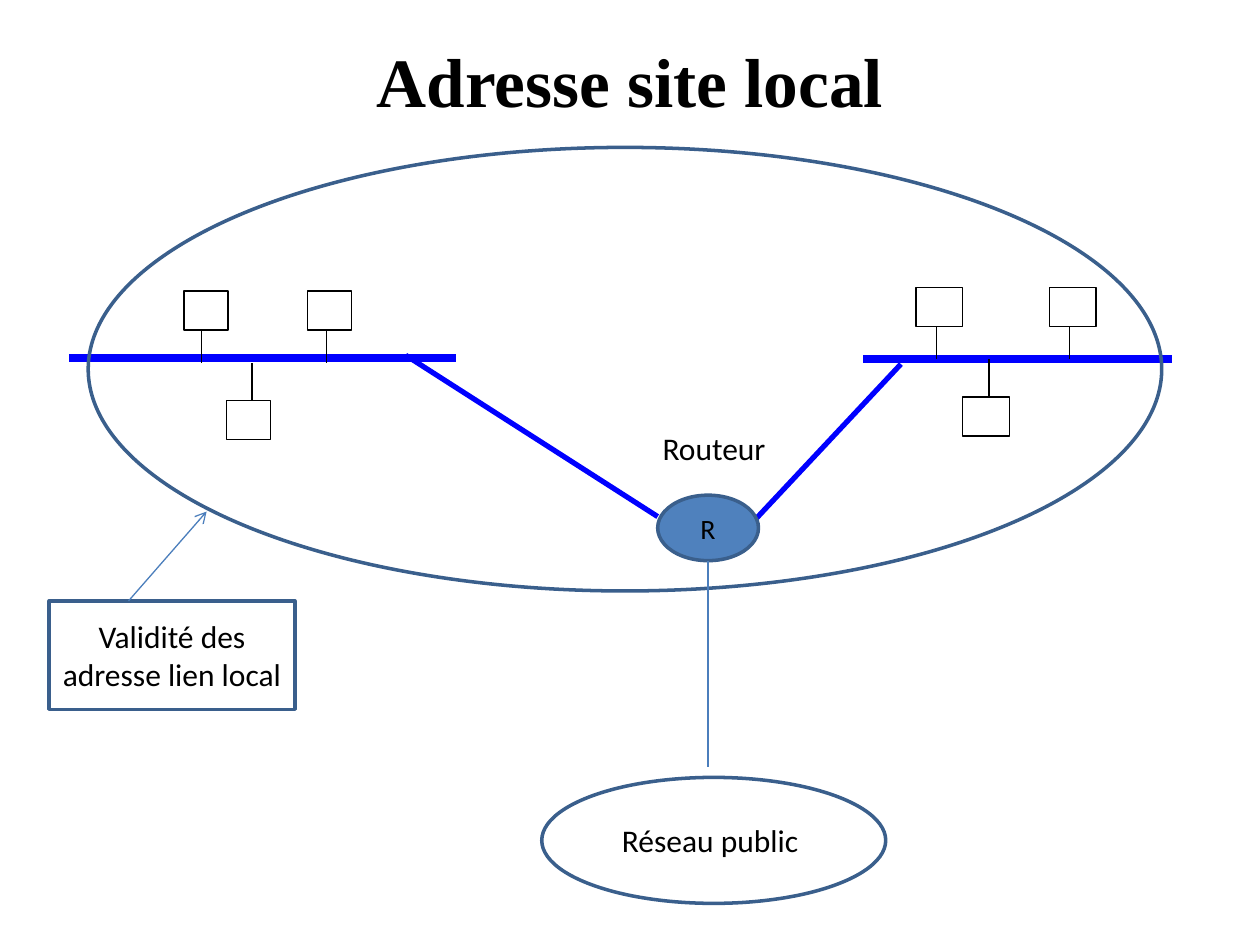
"""Build the slide showing the reach of site-local addresses around a router."""
from dataclasses import dataclass
from typing import NamedTuple, Optional

from lxml.etree import SubElement
from pptx import Presentation
from pptx.dml.color import RGBColor
from pptx.enum.shapes import MSO_CONNECTOR as Connector, MSO_SHAPE as Preset
from pptx.enum.text import MSO_ANCHOR as Anchor, MSO_AUTO_SIZE as AutoSize, PP_ALIGN as Align
from pptx.oxml.ns import qn
from pptx.util import Inches, Pt

COLUMNS, ROWS = 100, 75
SLIDE_WIDTH, SLIDE_HEIGHT = Inches(10), Inches(7.5)
TITLE_ONLY = 5


@dataclass(frozen=True)
class Theme:
    text: str = "000000"
    paper: str = "FFFFFF"
    cable: str = "0000FF"
    accent: str = "4F81BD"
    outline: str = "3A5F8C"
    link: str = "4B7EBC"
    body_font: str = "Calibri"
    title_font: str = "Times New Roman"
    title_size: float = 39.6
    label_size: float = 18
    router_size: float = 16
    thin: float = 0.75
    border: float = 2
    cable_width: float = 3
    bus_width: float = 4.5


THEME = Theme()


class Point(NamedTuple):
    column: float
    row: float


class Box(NamedTuple):
    column: float
    row: float
    width: float
    height: float


class Station(NamedTuple):
    column: float
    stem: float
    above: bool


@dataclass(frozen=True)
class Network:
    start: float
    end: float
    bus_row: float
    tap_row: float
    station_width: float
    stations: tuple[Station, ...]


@dataclass(frozen=True)
class Node:
    preset: Preset
    box: Box
    text: str = ""
    fill: Optional[str] = None
    line: str = THEME.outline
    line_width: float = THEME.border
    size: float = THEME.label_size


@dataclass(frozen=True)
class Link:
    start: Point
    end: Point
    color: str = THEME.link
    width: float = THEME.thin
    arrow: bool = False


STATION_HEIGHT = 3.1
RISE, DROP = 5.7, 3

NETWORKS = (
    Network(5.5, 36.2, 28.4, 28.8, 3.5,
            (Station(14.6, 16, True), Station(24.4, 25.9, True), Station(18, 20, False))),
    Network(68.5, 93, 28.5, 28.5, 3.7,
            (Station(72.7, 74.3, True), Station(83.3, 84.9, True), Station(76.4, 78.5, False))),
)
ROUTER_CABLES = (
    Link(Point(32.2, 28.2), Point(52.2, 41), THEME.cable, THEME.cable_width),
    Link(Point(59.6, 41.6), Point(71.5, 28.9), THEME.cable, THEME.cable_width),
)
ROUTER = Node(Preset.OVAL, Box(52.2, 39.3, 8, 5.2), "R", THEME.accent, size=THEME.router_size)
SITE = Node(Preset.OVAL, Box(7, 11.7, 85.2, 35.2))
VALIDITY = Node(Preset.RECTANGLE, Box(3.9, 47.7, 19.5, 8.6), "Validité des adresse lien local ")
PUBLIC = Node(Preset.OVAL, Box(43, 61.7, 27.3, 10), "Réseau public ")
VALIDITY_ARROW = Link(Point(10.2, 47.7), Point(16.4, 40.6), arrow=True)
PUBLIC_LINK = Link(Point(56.2, 44.5), Point(56.2, 60.9))
TITLE_BOX = Box(5, 3, 90, 12.5)
ROUTER_LABEL_BOX = Box(51.6, 33.6, 10.9, 4)


def across(columns: float) -> int:
    return round(SLIDE_WIDTH * columns / COLUMNS)


def down(rows: float) -> int:
    return round(SLIDE_HEIGHT * rows / ROWS)


def place(box: Box) -> tuple[int, int, int, int]:
    return across(box.column), down(box.row), across(box.width), down(box.height)


def add_text(frame, text: str, size: float, font: str = THEME.body_font,
             bold: bool = False, align: Align = Align.CENTER) -> None:
    paragraph = frame.paragraphs[0]
    paragraph.alignment = align
    run = paragraph.add_run()
    run.text = text
    run.font.name = font
    run.font.size = Pt(size)
    run.font.bold = bold
    run.font.color.rgb = RGBColor.from_string(THEME.text)


def draw_link(slide, link: Link) -> None:
    connector = slide.shapes.add_connector(
        Connector.STRAIGHT, across(link.start.column), down(link.start.row),
        across(link.end.column), down(link.end.row))
    connector.line.color.rgb = RGBColor.from_string(link.color)
    connector.line.width = Pt(link.width)
    if link.arrow:
        SubElement(connector.line._get_or_add_ln(), qn("a:tailEnd"), type="arrow")
    SubElement(connector._element.spPr, qn("a:effectLst"))


def draw_node(slide, node: Node) -> None:
    shape = slide.shapes.add_shape(node.preset, *place(node.box))
    shape.shadow.inherit = False
    if node.fill:
        shape.fill.solid()
        shape.fill.fore_color.rgb = RGBColor.from_string(node.fill)
    else:
        shape.fill.background()
    shape.line.color.rgb = RGBColor.from_string(node.line)
    shape.line.width = Pt(node.line_width)
    if node.text:
        shape.text_frame.word_wrap = True
        shape.text_frame.vertical_anchor = Anchor.MIDDLE
        add_text(shape.text_frame, node.text, node.size)


def draw_network(slide, network: Network) -> None:
    draw_link(slide, Link(Point(network.start, network.bus_row),
                          Point(network.end, network.bus_row), THEME.cable, THEME.bus_width))
    for station in network.stations:
        top = network.tap_row + (-RISE if station.above else DROP)
        edge = top + STATION_HEIGHT if station.above else top
        box = Box(station.column, top, network.station_width, STATION_HEIGHT)
        draw_node(slide, Node(Preset.RECTANGLE, box, fill=THEME.paper,
                              line=THEME.text, line_width=THEME.thin))
        draw_link(slide, Link(Point(station.stem, edge),
                              Point(station.stem, network.tap_row), THEME.text))


def format_title(slide) -> None:
    title = slide.shapes.title
    title.left, title.top, title.width, title.height = place(TITLE_BOX)
    frame = title.text_frame
    frame.auto_size = AutoSize.NONE
    frame.vertical_anchor = Anchor.TOP
    frame.margin_top = 0
    add_text(frame, "Adresse site local", THEME.title_size, THEME.title_font, bold=True)


def label_router(slide) -> None:
    frame = slide.shapes.add_textbox(*place(ROUTER_LABEL_BOX)).text_frame
    frame.word_wrap = False
    frame.auto_size = AutoSize.SHAPE_TO_FIT_TEXT
    add_text(frame, "Routeur", THEME.label_size, align=Align.LEFT)


def main() -> None:
    presentation = Presentation()
    presentation.slide_width, presentation.slide_height = SLIDE_WIDTH, SLIDE_HEIGHT
    slide = presentation.slides.add_slide(presentation.slide_layouts[TITLE_ONLY])
    format_title(slide)
    for network in NETWORKS:
        draw_network(slide, network)
    for cable in ROUTER_CABLES:
        draw_link(slide, cable)
    for node in (ROUTER, SITE, VALIDITY, PUBLIC):
        draw_node(slide, node)
    for link in (VALIDITY_ARROW, PUBLIC_LINK):
        draw_link(slide, link)
    label_router(slide)
    presentation.save("out.pptx")


if __name__ == "__main__":
    main()
